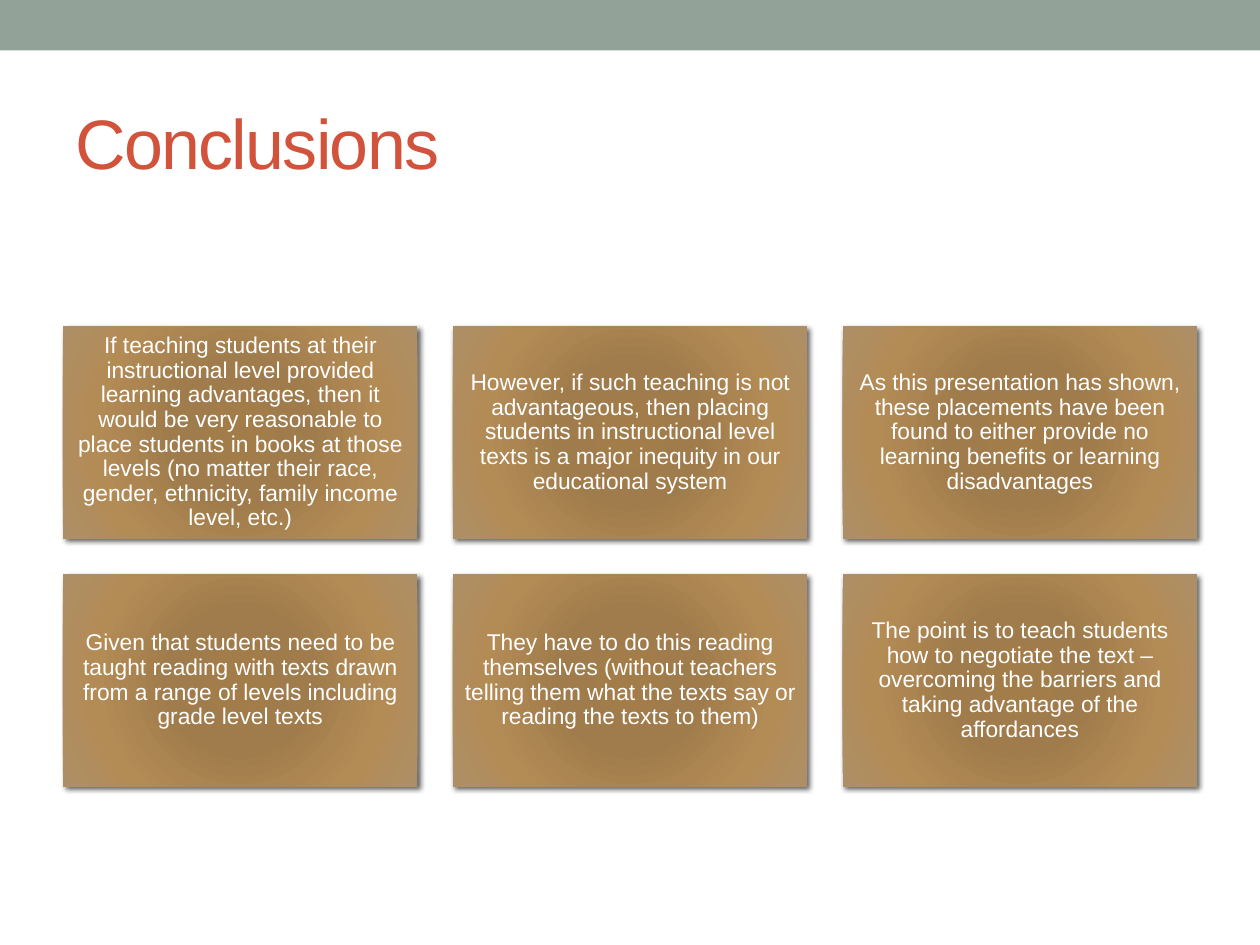
from lxml.etree import SubElement
from pptx import Presentation
from pptx.dml.color import RGBColor
from pptx.enum.shapes import MSO_SHAPE
from pptx.enum.text import MSO_ANCHOR, MSO_AUTO_SIZE, PP_ALIGN
from pptx.oxml import parse_xml
from pptx.oxml.ns import nsdecls, qn
from pptx.util import Pt

# Content
TITLE = "Conclusions"
CONCLUSIONS = [
    "If teaching students at their instructional level provided learning advantages, "
    "then it would be very reasonable to place students in books at those levels "
    "(no matter their race, gender, ethnicity, family income level, etc.)",
    "However, if such teaching is not advantageous, then placing students in "
    "instructional level texts is a major inequity in our educational system",
    "As this presentation has shown, these placements have been found to either "
    "provide no learning benefits or learning disadvantages",
    "Given that students need to be taught reading with texts drawn from a range "
    "of levels including grade level texts",
    "They have to do this reading themselves (without teachers telling them what "
    "the texts say or reading the texts to them)",
    "The point is to teach students how to negotiate the text – overcoming the "
    "barriers and taking advantage of the affordances",
]

# Style
FONT = "Arial"
SAGE = RGBColor(0x93, 0xA2, 0x99)
RED = RGBColor(0xD2, 0x53, 0x3C)
WHITE = RGBColor(0xFF, 0xFF, 0xFF)
BLACK = RGBColor(0, 0, 0)
CARD_GRADIENT = [
    (0, RGBColor(0xA3, 0x7D, 0x49)),
    (34, RGBColor(0xA0, 0x7C, 0x4C)),
    (70, RGBColor(0xB3, 0x8B, 0x55)),
    (100, RGBColor(0xAD, 0x8F, 0x67)),
]

# Layout in points
SLIDE_WIDTH, SLIDE_HEIGHT = 720, 540
MARGIN = 36
BANNER_HEIGHT = 28.8
TITLE_TOP, TITLE_HEIGHT = 41.75, 78
COLUMNS = 3
GAP = 20.25
CARD_WIDTH = (SLIDE_WIDTH - 2 * MARGIN - (COLUMNS - 1) * GAP) / COLUMNS
CARD_HEIGHT = CARD_WIDTH * 0.6
GRID_TOP = 186.4


def add_rectangle(slide, left, top, width, height):
    shape = slide.shapes.add_shape(
        MSO_SHAPE.RECTANGLE, Pt(left), Pt(top), Pt(width), Pt(height))
    shape.shadow.inherit = False
    shape.line.fill.background()
    return shape


def write_text(paragraph, text, size, color):
    run = paragraph.add_run()
    run.text = text
    run.font.name = FONT
    run.font.size = Pt(size)
    run.font.color.rgb = color
    return run


def set_radial_fill(shape, stops):
    shape.fill.background()
    properties = shape.element.spPr
    stop_xml = "".join(
        f'<a:gs pos="{position * 1000}"><a:srgbClr val="{color}"/></a:gs>'
        for position, color in stops)
    gradient = parse_xml(
        f'<a:gradFill {nsdecls("a")} rotWithShape="1"><a:gsLst>{stop_xml}</a:gsLst>'
        '<a:path path="circle"><a:fillToRect l="50000" t="50000" r="50000" b="50000"/>'
        '</a:path></a:gradFill>')
    properties.replace(properties.find(qn("a:noFill")), gradient)


def set_shadow(shape, color, opacity, blur, distance, angle):
    effects = shape.element.spPr.find(qn("a:effectLst"))
    shadow = SubElement(
        effects, qn("a:outerShdw"), blurRad=str(Pt(blur)), dist=str(Pt(distance)),
        dir=str(angle * 60000), rotWithShape="0")
    shade = SubElement(shadow, qn("a:srgbClr"), val=str(color))
    SubElement(shade, qn("a:alpha"), val=str(opacity * 1000))


def add_card(slide, left, top, text):
    card = add_rectangle(slide, left, top, CARD_WIDTH, CARD_HEIGHT)
    set_radial_fill(card, CARD_GRADIENT)
    set_shadow(card, BLACK, opacity=60, blur=3, distance=2, angle=45)
    frame = card.text_frame
    frame.word_wrap = True
    frame.vertical_anchor = MSO_ANCHOR.MIDDLE
    frame.margin_left = frame.margin_right = Pt(3.6)
    frame.margin_top = frame.margin_bottom = Pt(3.6)
    paragraph = frame.paragraphs[0]
    paragraph.alignment = PP_ALIGN.CENTER
    paragraph.line_spacing = 0.9
    write_text(paragraph, text, 13, WHITE)


def main():
    presentation = Presentation()
    presentation.slide_width = Pt(SLIDE_WIDTH)
    presentation.slide_height = Pt(SLIDE_HEIGHT)
    slide = presentation.slides.add_slide(presentation.slide_layouts[5])

    # Banner
    banner = add_rectangle(slide, 0, 0, SLIDE_WIDTH, BANNER_HEIGHT)
    banner.fill.solid()
    banner.fill.fore_color.rgb = SAGE

    # Title
    title = slide.shapes.title
    title.left, title.top = Pt(MARGIN), Pt(TITLE_TOP)
    title.width, title.height = Pt(SLIDE_WIDTH - 2 * MARGIN), Pt(TITLE_HEIGHT)
    title.text_frame.auto_size = MSO_AUTO_SIZE.NONE
    title.text_frame.vertical_anchor = MSO_ANCHOR.MIDDLE
    heading = title.text_frame.paragraphs[0]
    heading.alignment = PP_ALIGN.LEFT
    run = write_text(heading, TITLE, 40, RED)
    run.font._element.set("spc", "-100")

    # Cards in a grid
    for index, text in enumerate(CONCLUSIONS):
        row, column = divmod(index, COLUMNS)
        add_card(slide, MARGIN + column * (CARD_WIDTH + GAP),
                 GRID_TOP + row * (CARD_HEIGHT + GAP), text)

    presentation.save("out.pptx")


if __name__ == "__main__":
    main()
